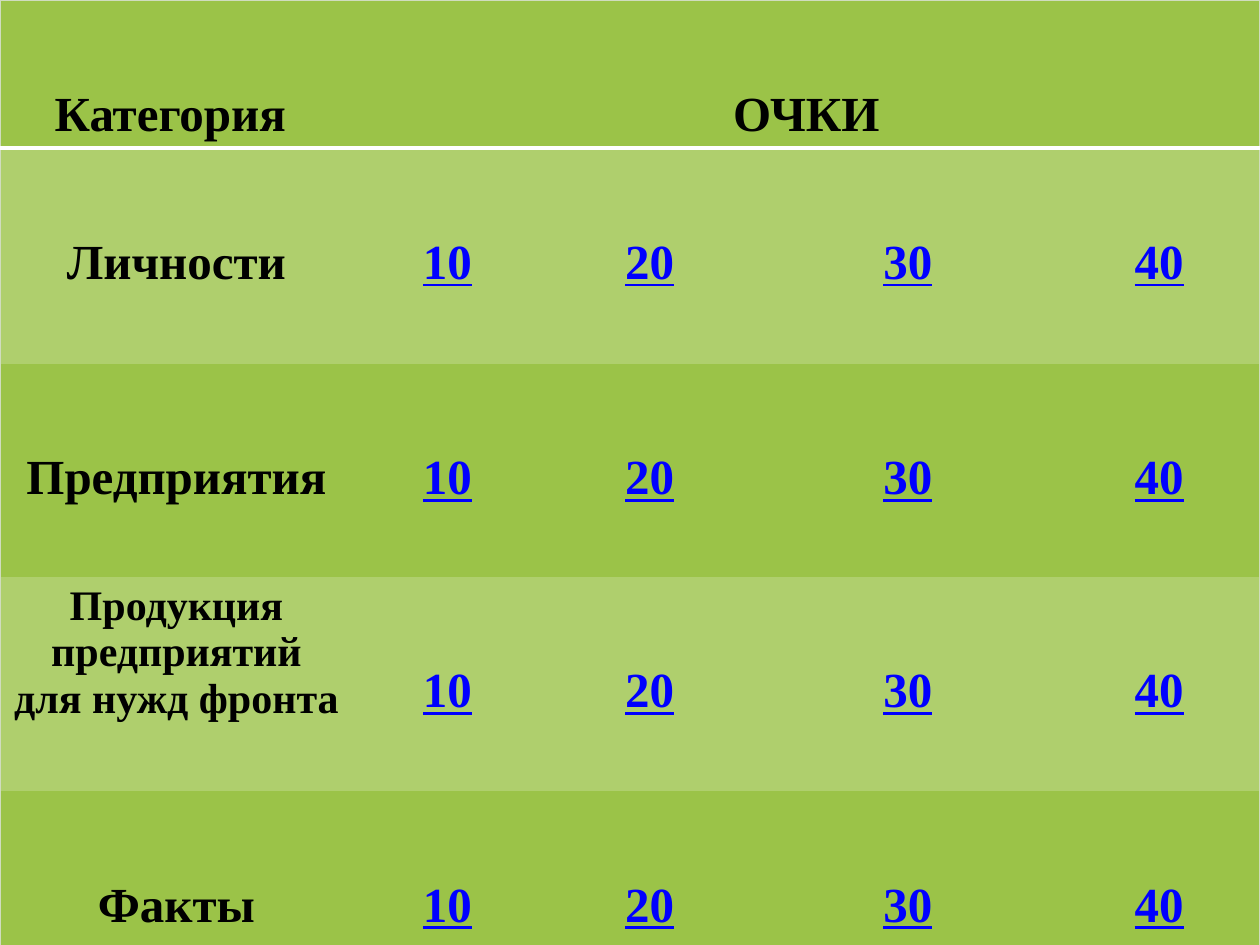
from lxml.etree import SubElement
from pptx import Presentation
from pptx.dml.color import RGBColor
from pptx.enum.text import PP_ALIGN
from pptx.oxml.ns import qn
from pptx.util import Inches, Pt

GREEN, LIGHT_GREEN, EDGE = "9BC348", "AFCF6D", "D0DCBF"
COLUMNS = [2.8, 1.5, 1.71, 2.39, 1.6]
ROWS = [1.11, 1.71, 1.69, 1.7, 1.82]
CATEGORIES = ["Личности", "Предприятия", "Продукция предприятий для нужд фронта", "Факты"]
POINTS = ["10", "20", "30", "40"]
NO_STYLE = "{2D5ABB26-0587-4C30-8999-92F81FD0307C}"


def write(cell, text, size=28, color="000000", spacing=2.5, underline=False):
    para = cell.text_frame.paragraphs[0]
    para.alignment = PP_ALIGN.CENTER
    para.line_spacing = spacing
    span = para.add_run()
    span.text = text
    span.font.name = "Times New Roman"
    span.font.size = Pt(size)
    span.font.bold = True
    span.font.underline = underline
    span.font.color.rgb = RGBColor.from_string(color)


def border(cell, side, color=EDGE, width=0.75):
    line = SubElement(cell._tc.get_or_add_tcPr(), qn("a:ln" + side), w=str(Pt(width)))
    SubElement(SubElement(line, qn("a:solidFill")), qn("a:srgbClr"), val=color)


deck = Presentation()
deck.slide_width, deck.slide_height = Inches(10), Inches(7.5)
page = deck.slides.add_slide(deck.slide_layouts[6])

# Table grid
frame = page.shapes.add_table(len(ROWS), len(COLUMNS), 0, 0,
                              Inches(sum(COLUMNS)), Inches(sum(ROWS)))
table = frame.table
table._tbl.tblPr.find(qn("a:tableStyleId")).text = NO_STYLE
for column, width in zip(table.columns, COLUMNS):
    column.width = Inches(width)
for row, height in zip(table.rows, ROWS):
    row.height = Inches(height)
table.cell(0, 1).merge(table.cell(0, len(COLUMNS) - 1))

# Outer edges, white rule below the header, banded fills
last_row, last_column = len(ROWS) - 1, len(COLUMNS) - 1
for r in range(len(ROWS)):
    for c in range(len(COLUMNS)):
        cell = table.cell(r, c)
        if c == 0:
            border(cell, "L")
        if c == last_column or (r, c) == (0, 1):
            border(cell, "R")
        if r == 0:
            border(cell, "T")
            border(cell, "B", "FFFFFF", 3)
        if r == last_row:
            border(cell, "B")
        cell.fill.solid()
        cell.fill.fore_color.rgb = RGBColor.from_string(LIGHT_GREEN if r % 2 else GREEN)

# Header, then one row of points for each category
write(table.cell(0, 0), "Категория ")
write(table.cell(0, 1), "ОЧКИ")
for r, category in enumerate(CATEGORIES, start=1):
    is_long = len(category) > 20
    write(table.cell(r, 0), category, size=24 if is_long else 28,
          spacing=1.0 if is_long else 2.5)
    for c, points in enumerate(POINTS, start=1):
        write(table.cell(r, c), points, color="0000FF", underline=True)

deck.save("out.pptx")
